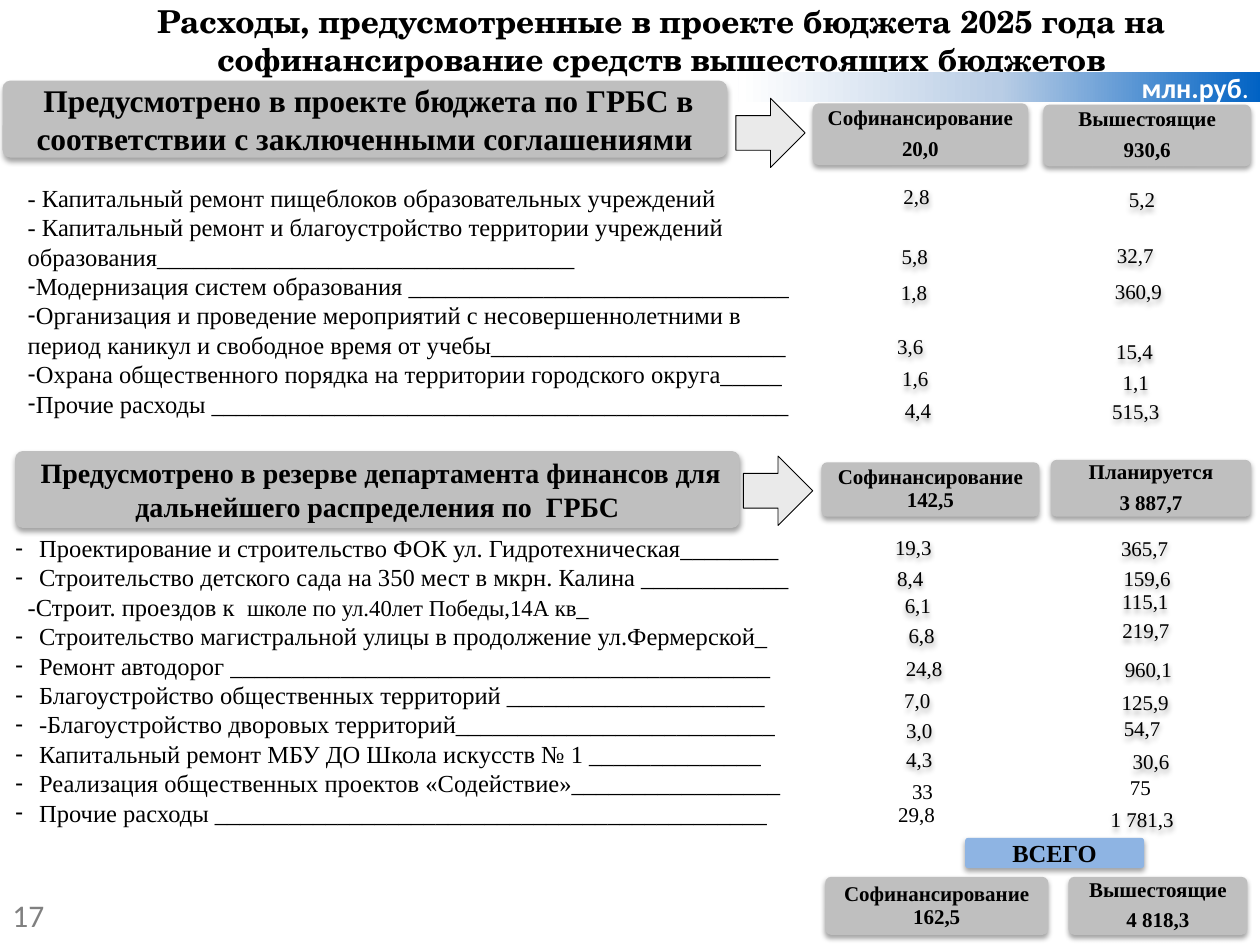
from copy import deepcopy
from lxml import etree
from pptx import Presentation
from pptx.dml.color import RGBColor
from pptx.enum.shapes import MSO_SHAPE as SHAPE
from pptx.enum.text import MSO_ANCHOR as ANCHOR, MSO_AUTO_SIZE as AUTO, PP_ALIGN as ALIGN
from pptx.oxml.ns import qn
from pptx.util import Pt

PX = 9144
SERIF = "Times New Roman"
rgb = RGBColor.from_string


def style(p, size, font=SERIF, color="000000", bold=False, align=ALIGN.LEFT):
    p.alignment = align
    p.font.size = Pt(size)
    p.font.name = font
    p.font.color.rgb = rgb(color)
    p.font.bold = bold


def box(x, y, w, h, lines=(), size=12, fill=None, kind=SHAPE.ROUNDED_RECTANGLE, bold=False, shadow=True):
    s = prs.slides[0].shapes.add_shape(kind, x * PX, y * PX, w * PX, h * PX)
    s.shadow.inherit = False
    s.line.fill.background()
    if kind == SHAPE.ROUNDED_RECTANGLE:
        s.adjustments[0] = 0.1
    if fill:
        s.fill.solid()
        s.fill.fore_color.rgb = rgb(fill)
    else:
        s.fill.background()
    if shadow:
        effects = s._element.spPr.find(qn("a:effectLst"))
        outer = etree.SubElement(effects, qn("a:outerShdw"), blurRad="39370", dist="22860",
                                 dir="5400000", rotWithShape="0")
        black = etree.SubElement(outer, qn("a:srgbClr"), val="000000")
        etree.SubElement(black, qn("a:alpha"), val="36000")
    tf = s.text_frame
    tf.word_wrap = True
    tf.vertical_anchor = ANCHOR.MIDDLE
    tf.margin_left = tf.margin_right = 5 * PX
    tf.margin_top = tf.margin_bottom = 0
    for i, line in enumerate(lines):
        p = tf.add_paragraph() if i else tf.paragraphs[0]
        p.text = line
        style(p, size, bold=bold, align=ALIGN.CENTER)
        if bold and size == 12:
            p.line_spacing = 0.9
            p.space_after = Pt(4.5 if i < len(lines) - 1 else 0)
    return s


prs = Presentation()
prs.slide_width, prs.slide_height = 1000 * PX, 750 * PX
slide = prs.slides.add_slide(prs.slide_layouts[3])
title, agreed_list, reserve_list = slide.placeholders

title.left, title.top, title.width, title.height = 75 * PX, 0, 900 * PX, 63 * PX
tf = title.text_frame
tf.text = "Расходы, предусмотренные в проекте бюджета 2025 года на софинансирование средств вышестоящих бюджетов"
tf.auto_size = AUTO.NONE
tf.vertical_anchor = ANCHOR.MIDDLE
style(tf.paragraphs[0], 18, "TeX Gyre Schola", bold=True, align=ALIGN.CENTER)

agreed = [
    ("", "- Капитальный ремонт пищеблоков образовательных учреждений"),
    ("", "- Капитальный ремонт и благоустройство территории учреждений образования" + "_" * 34),
    ("-", "Модернизация систем образования " + "_" * 31),
    ("-", "Организация и проведение мероприятий с несовершеннолетними в период каникул и свободное время от учебы"
     + "_" * 24),
    ("-", "Охрана общественного порядка на территории городского округа" + "_" * 5),
    ("-", "Прочие расходы " + "_" * 47),
]
reserve = [
    ("-", "Проектирование и строительство ФОК ул. Гидротехническая" + "_" * 8),
    ("-", "Строительство детского сада на 350 мест в мкрн. Калина " + "_" * 12),
    ("", "-Строит. проездов к  |школе по ул.40лет Победы,14А кв|_"),
    ("-", "Строительство магистральной улицы в продолжение ул.Фермерской_"),
    ("-", "Ремонт автодорог " + "_" * 44),
    ("-", "Благоустройство общественных территорий " + "_" * 21),
    ("-", "-Благоустройство дворовых территорий" + "_" * 26),
    ("-", "Капитальный ремонт МБУ ДО Школа искусств № 1 " + "_" * 14),
    ("-", "Реализация общественных проектов «Содействие»" + "_" * 17),
    ("-", "Прочие расходы " + "_" * 45),
]
for s, (x, y, w, h), items, hang, plain in [
    (agreed_list, (12, 140, 642, 199), agreed, 0, 0),
    (reserve_list, (2, 418, 637, 246), reserve, 19, 10),
]:
    s.left, s.top, s.width, s.height = x * PX, y * PX, w * PX, h * PX
    tf = s.text_frame
    tf.auto_size = AUTO.NONE
    for i, (bullet, line) in enumerate(items):
        p = tf.add_paragraph() if i else tf.paragraphs[0]
        style(p, 14)
        p.space_before = Pt(0)
        for j, part in enumerate(line.split("|")):
            r = p.add_run()
            r.text = part
            if j == 1:
                r.font.size = Pt(13)
        pPr = p._p.get_or_add_pPr()
        pPr.set("marL", str((hang if bullet else plain) * PX))
        pPr.set("indent", str(-hang * PX if bullet else 0))
        mark = etree.Element(qn("a:buChar"), char=bullet) if bullet else etree.Element(qn("a:buNone"))
        pPr.find(qn("a:defRPr")).addprevious(mark)

band = box(586, 57, 415, 24, ["млн.руб"], 16, kind=SHAPE.RECTANGLE, shadow=False)
p = band.text_frame.paragraphs[0]
style(p, 16, "Calibri", "FFFFFF", True, ALIGN.RIGHT)
band.text_frame.margin_right = 10 * PX
r = p.add_run()
r.text = "."
r.font.bold = False
band.fill.gradient()
band.fill.gradient_angle = 180
stops = band._element.spPr.find(qn("a:gradFill")).find(qn("a:gsLst"))
stops.insert(1, deepcopy(stops[0]))
for stop, position, color in zip(band.fill.gradient_stops, (0, 0.5, 1), ("0062C4", "B9CDE5", "FFFFFF")):
    stop.position = position
    stop.color.rgb = rgb(color)

box(2, 64, 575, 61, [" Предусмотрено в проекте бюджета по ГРБС в соответствии с заключенными соглашениями"],
    18, "BFBFBF", bold=True)
box(12, 358, 575, 61, [" Предусмотрено в резерве департамента финансов для дальнейшего распределения по  ГРБС"],
    16, "BFBFBF", bold=True)
box(766, 665, 142, 24, ["ВСЕГО"], 14, "8EB4E3", bold=True)

for x, y in [(584, 78), (590, 362)]:
    arrow = box(x, y, 55, 55, fill="EAEAEA", kind=SHAPE.RIGHT_ARROW, shadow=False)
    arrow.line.color.rgb = rgb("000000")
    arrow.line.width = Pt(0.5)

for x, y, w, h, lines in [
    (645, 82, 171, 49, ["Софинансирование", "20,0"]),
    (828, 83, 165, 49, ["Вышестоящие", "930,6"]),
    (652, 367, 173, 43, ["Софинансирование 142,5"]),
    (834, 365, 159, 45, ["Планируется", "3 887,7"]),
    (655, 696, 177, 46, ["Софинансирование 162,5"]),
    (848, 696, 142, 46, ["Вышестоящие", "4 818,3"]),
]:
    box(x, y, w, h, lines, fill="BFBFBF", bold=True)

for x, y, w, h, value in [
    (656, 147, 143, 18, "2,8"), (835, 149, 143, 18, "5,2"),
    (655, 193, 142, 21, "5,8"), (827, 192, 148, 21, "32,7"),
    (656, 221, 139, 21, "1,8"), (829, 221, 149, 20, "360,9"),
    (653, 264, 139, 21, "3,6"), (826, 268, 149, 22, "15,4"),
    (655, 291, 143, 18, "1,6"), (826, 291, 151, 24, "1,1"),
    (659, 314, 139, 23, "4,4"), (826, 316, 151, 20, "515,3"),
    (650, 422, 150, 24, "19,3"), (830, 424, 157, 22, "365,7"),
    (647, 446, 151, 25, "8,4"), (832, 447, 157, 23, "159,6"),
    (653, 470, 151, 21, "6,1"), (840, 466, 138, 22, "115,1"),
    (656, 493, 151, 23, "6,8"), (834, 491, 151, 18, "219,7"),
    (655, 521, 157, 19, "24,8"), (843, 523, 137, 16, "960,1"),
    (657, 544, 142, 24, "7,0"), (841, 546, 136, 23, "125,9"),
    (654, 569, 151, 21, "3,0"), (831, 569, 151, 18, "54,7"),
    (654, 592, 151, 21, "4,3"), (838, 595, 151, 18, "30,6"),
    (831, 641, 151, 18, "1 781,3"),
]:
    box(x, y, w, h, [value])

for x, y, w, h, value, size, font, color in [
    (714, 613, 46, 30, "33", 12, SERIF, "000000"),
    (887, 610, 63, 30, "75", 12, SERIF, "000000"),
    (703, 631, 76, 30, "29,8", 12, SERIF, "000000"),
    (0, 706, 75, 40, "17", 18, "Calibri", "808080"),
]:
    tf = slide.shapes.add_textbox(x * PX, y * PX, w * PX, h * PX).text_frame
    tf.word_wrap = True
    tf.text = value
    style(tf.paragraphs[0], size, font, color)

prs.save("out.pptx")
